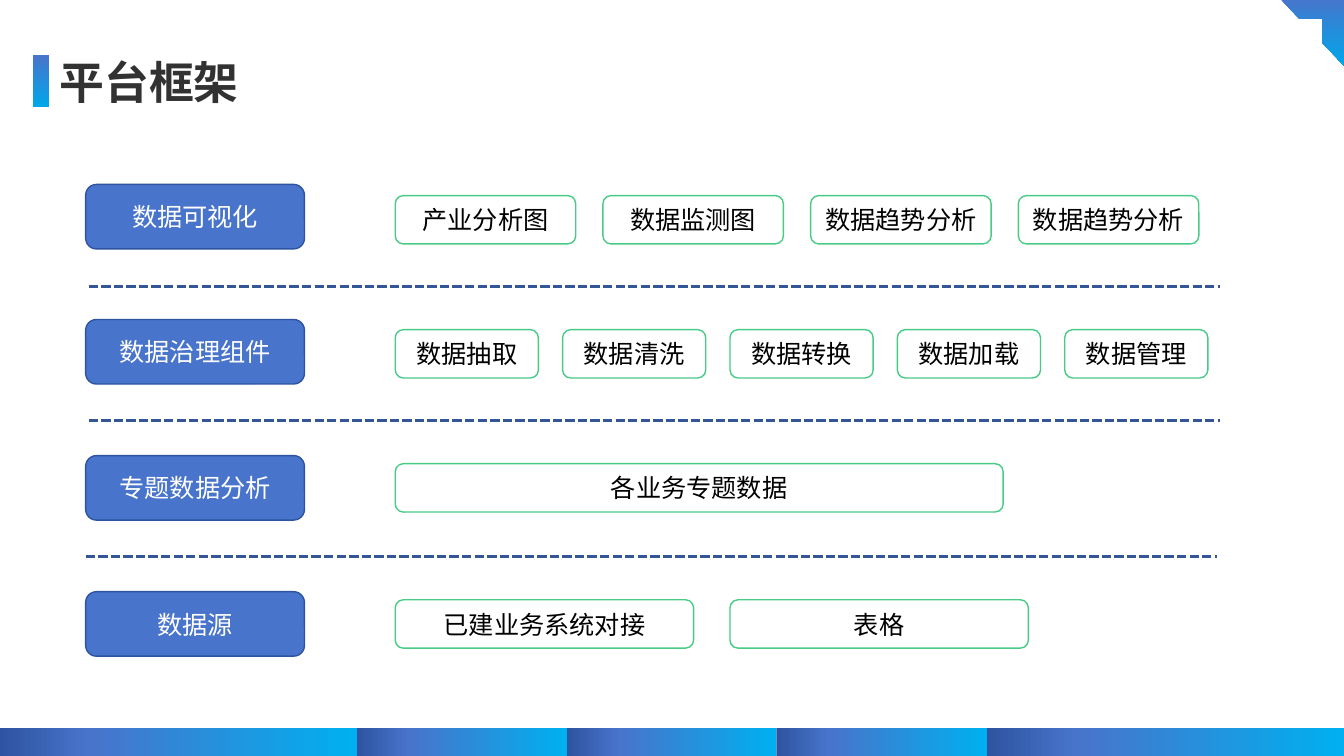
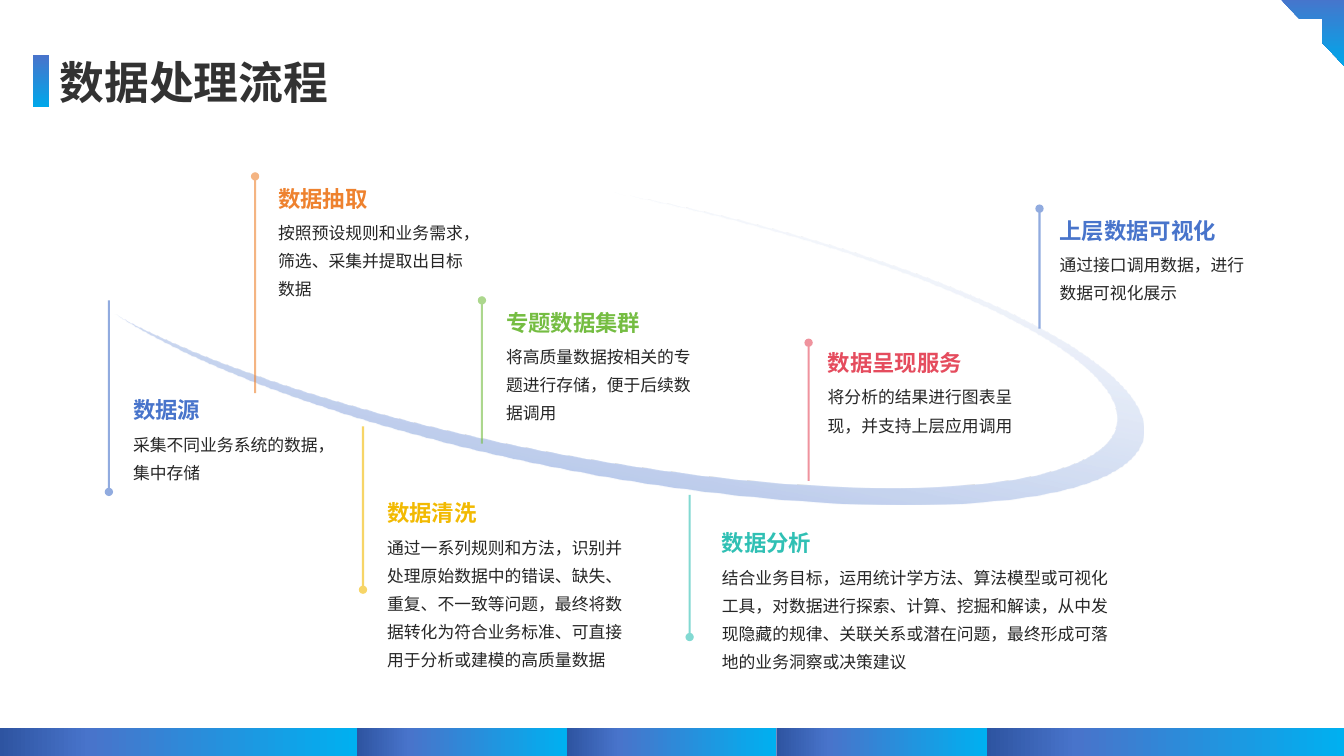
from dataclasses import dataclass
from math import ceil, cos, radians, sin

from lxml.etree import SubElement
from pptx import Presentation
from pptx.dml.color import RGBColor
from pptx.enum.dml import MSO_LINE
from pptx.enum.shapes import MSO_CONNECTOR, MSO_SHAPE
from pptx.enum.text import MSO_ANCHOR, PP_ALIGN
from pptx.oxml.ns import qn
from pptx.util import Inches, Pt


@dataclass(frozen=True)
class Theme:
    font: str = "Noto Sans CJK SC"
    label_font: str = "Arial"
    title_size: int = 32
    label_size: int = 18
    heading_size: int = 16
    body_size: int = 12
    title: str = "323232"
    body: str = "262626"
    black: str = "000000"
    white: str = "FFFFFF"
    blue: str = "4874CB"
    navy: str = "2E54A1"
    dash: str = "355696"
    sky: str = "00A7EA"
    cyan: str = "00B0F0"
    chip: str = "48CB87"
    orange: str = "EE822F"
    yellow: str = "F2BA02"
    green: str = "75BD42"
    teal: str = "30C0B4"
    red: str = "E54C5E"
    opacity: int = 60


T = Theme()
ACCENT = [(0, T.blue, 100), (100, T.sky, 100)]
BAND = [(0, T.navy, 100), (25, T.blue, 100), (100, T.cyan, 100)]
SWEEP_FILL = [(0, T.white, 0), (91, T.blue, T.opacity)]


def rgb(colour):
    return RGBColor.from_string(colour)


def write(tf, text, size=T.body_size, colour=T.body, bold=False, font=T.font,
          align=PP_ALIGN.LEFT, anchor=MSO_ANCHOR.TOP, spacing=None, inset=0):
    """Put one formatted paragraph into a text frame."""
    tf.word_wrap = True
    tf.vertical_anchor = anchor
    tf.margin_left = tf.margin_right = Inches(inset)
    tf.margin_top = tf.margin_bottom = Inches(inset / 2)
    p = tf.paragraphs[0]
    p.alignment = align
    if spacing:
        p.line_spacing = spacing
    r = p.add_run()
    r.text = text
    r.font.name, r.font.size, r.font.bold = font, Pt(size), bold
    r.font.color.rgb = rgb(colour)
    SubElement(r.font._element, qn("a:ea")).set("typeface", T.font)


def set_gradient(sp, stops, angle):
    """Fill with (position, colour, opacity) stops; angle runs clockwise."""
    sp.fill.background()
    spPr = sp._element.spPr
    no_fill = spPr.find(qn("a:noFill"))
    grad = SubElement(spPr, qn("a:gradFill"))
    grad.set("rotWithShape", "1")
    gs_lst = SubElement(grad, qn("a:gsLst"))
    for pos, colour, opacity in stops:
        gs = SubElement(gs_lst, qn("a:gs"))
        gs.set("pos", str(pos * 1000))
        clr = SubElement(gs, qn("a:srgbClr"))
        clr.set("val", colour)
        if opacity < 100:
            SubElement(clr, qn("a:alpha")).set("val", str(opacity * 1000))
    SubElement(grad, qn("a:lin")).set("ang", str(angle * 60000))
    spPr.replace(no_fill, grad)


def bend(sp, segments):
    """Turn each run of three line points into one Bezier curve."""
    lines = iter(sp._element.spPr.findall(".//" + qn("a:lnTo")))
    for segment in segments:
        first, *rest = [next(lines) for _ in segment]
        if rest:
            first.tag = qn("a:cubicBezTo")
            for ln in rest:
                first.append(ln[0])
                ln.getparent().remove(ln)


class Deck:
    def __init__(self):
        self.prs = Presentation()
        self.prs.slide_width, self.prs.slide_height = Inches(13.33), Inches(7.5)
        self.s = None

    def new_slide(self, title):
        """Start a slide with title, accents and bottom band."""
        self.s = self.prs.slides.add_slide(self.prs.slide_layouts[5])
        sp = self.s.shapes.title
        sp.left, sp.top, sp.width, sp.height = map(Inches, (0.49, 0.49, 3, 0.64))
        write(sp.text_frame, title, size=T.title_size, colour=T.title,
              bold=True, inset=0.1)
        self.shape(MSO_SHAPE.RECTANGLE, 0.33, 0.55, 0.16, 0.51, stops=ACCENT, angle=90)
        corner = self.shape(MSO_SHAPE.HALF_FRAME, 12.68, -0.03, 0.65, 0.68,
                            stops=ACCENT, angle=90)
        corner._element.spPr.find(qn("a:xfrm")).set("flipH", "1")
        edges = [0, 3.54, 5.62, 7.7, 9.79, 13.33]
        for left, right in zip(edges, edges[1:]):
            self.shape(MSO_SHAPE.RECTANGLE, left, 7.22, right - left, 0.35, stops=BAND)

    def shape(self, kind, x, y, w, h, fill=None, line=None, stops=None, angle=0):
        sp = self.s.shapes.add_shape(kind, *map(Inches, (x, y, w, h)))
        self.style(sp, fill, line, stops, angle)
        return sp

    def style(self, sp, fill=None, line=None, stops=None, angle=0):
        sp.shadow.inherit = False
        if stops:
            set_gradient(sp, stops, angle)
        elif fill:
            sp.fill.solid()
            sp.fill.fore_color.rgb = rgb(fill)
        else:
            sp.fill.background()
        if line:
            sp.line.color.rgb = rgb(line)
            sp.line.width = Pt(1)
        else:
            sp.line.fill.background()

    def box(self, text, x, y, w, h, colour, fill=None, line=None):
        """Rounded box with a centred label."""
        sp = self.shape(MSO_SHAPE.ROUNDED_RECTANGLE, x, y, w, h, fill, line)
        write(sp.text_frame, text, size=T.label_size, colour=colour,
              font=T.label_font, align=PP_ALIGN.CENTER, anchor=MSO_ANCHOR.MIDDLE)

    def text(self, text, x, y, w, h, **fmt):
        sp = self.s.shapes.add_textbox(*map(Inches, (x, y, w, h)))
        write(sp.text_frame, text, **fmt)

    def line(self, x1, y1, x2, y2, colour, width):
        cx = self.s.shapes.add_connector(
            MSO_CONNECTOR.STRAIGHT, *map(Inches, (x1, y1, x2, y2)))
        cx.line.color.rgb = rgb(colour)
        cx.line.width = Pt(width)
        SubElement(cx._element.spPr, qn("a:effectLst"))
        return cx

    def divider(self, x1, x2, y):
        self.line(x1, y, x2, y, T.dash, 2.25).line.dash_style = MSO_LINE.SQUARE_DOT

    def stem(self, x, dot_y, end_y, colour):
        """Pale vertical line that starts with a dot."""
        ln = self.line(x, dot_y, x, end_y, colour, 1.5).line._ln
        alpha = SubElement(ln.find(".//" + qn("a:srgbClr")), qn("a:alpha"))
        alpha.set("val", str(T.opacity * 1000))
        SubElement(ln, qn("a:headEnd")).set("type", "oval")

    def callout(self, heading, body, colour, x, y, w, stem_x, dot_y, end_y):
        self.stem(stem_x, dot_y, end_y, colour)
        self.text(heading, x, y, 1.87, 0.35, size=T.heading_size, colour=colour,
                  bold=True, anchor=MSO_ANCHOR.BOTTOM)
        lines = ceil(len(body) * T.body_size / 72 / w)
        self.text(body, x, y + 0.38, w, lines * 0.28, spacing=1.4)

    def outline(self, start, segments, rotation, stops, angle):
        """Curved outline in page points, with a gradient that turns with it."""
        points = [start] + [pt for segment in segments for pt in segment]
        a = radians(rotation)
        mx, my = (sum((min(v), max(v))) / 2 for v in zip(*points))
        flat = [(mx + (x - mx) * cos(a) + (y - my) * sin(a),
                 my - (x - mx) * sin(a) + (y - my) * cos(a)) for x, y in points]
        emu = [(Inches(x), Inches(y)) for x, y in flat]
        fb = self.s.shapes.build_freeform(*emu[0])
        fb.add_line_segments(emu[1:], close=True)
        sp = fb.convert_to_shape()
        bend(sp, segments)
        self.style(sp, stops=stops, angle=angle)
        # Rotation turns about the box centre, so move that centre to the page
        bx, by = (sum((min(v), max(v))) / 2 - m for v, m in zip(zip(*flat), (mx, my)))
        sp.left += Inches(bx * cos(a) - by * sin(a) - bx)
        sp.top += Inches(bx * sin(a) + by * cos(a) - by)
        sp.rotation = rotation


# Platform layers: label, label y, chip y, chip width, chip step, chips
LAYERS = [
    ("数据可视化", 1.83, 1.94, 1.79, 2.06,
     ["产业分析图", "数据监测图", "数据趋势分析", "数据趋势分析"]),
    ("数据治理组件", 3.17, 3.27, 1.42, 1.66,
     ["数据抽取", "数据清洗", "数据转换", "数据加载", "数据管理"]),
    ("专题数据分析", 4.52, 4.6, 6.03, 0, ["各业务专题数据"]),
    ("数据源", 5.87, 5.95, 2.96, 3.32, ["已建业务系统对接", "表格"]),
]
DIVIDERS = [(0.88, 12.1, 2.84), (0.88, 12.1, 4.17), (0.85, 12.07, 5.52)]

# Tapering sweep: inner edge out, outer edge back
SWEEP_START = (6.17, 1.93)
SWEEP = [
    [(6.04, 1.9)],
    [(6.45, 1.99)],
    [(9.17, 2.58), (11.2, 3.54), (11.07, 4.21)],
    [(10.93, 4.93), (8.39, 5.04), (5.4, 4.47)],
    [(3.71, 4.15), (2.24, 3.68), (1.3, 3.2)],
    [(1.14, 3.11)],
    [(1.27, 3.19)],
    [(2.18, 3.74), (3.78, 4.3), (5.65, 4.66)],
    [(8.65, 5.23), (11.19, 5.08), (11.34, 4.33)],
    [(11.48, 3.58), (9.17, 2.5), (6.17, 1.93)],
]

# Steps: heading, body, colour, text x, heading y, width, stem x, dot y, end y
STEPS = [
    ("数据分析", "结合业务目标，运用统计学方法、算法模型或可视化工具，对数据进行探索、计算、"
     "挖掘和解读，从中发现隐藏的规律、关联关系或潜在问题，最终形成可落地的业务洞察或决策建议",
     T.teal, 7.16, 5.17, 3.91, 6.84, 6.32, 4.91),
    ("数据呈现服务", "将分析的结果进行图表呈现，并支持上层应用调用",
     T.red, 8.21, 3.38, 1.87, 8.02, 3.4, 4.77),
    ("上层数据可视化", "通过接口调用数据，进行数据可视化展示",
     T.blue, 10.51, 2.07, 1.87, 10.31, 2.07, 3.26),
    ("专题数据集群", "将高质量数据按相关的专题进行存储，便于后续数据调用",
     T.green, 5.02, 2.98, 1.87, 4.78, 2.98, 4.4),
    ("数据抽取", "按照预设规则和业务需求，筛选、采集并提取出目标数据",
     T.orange, 2.76, 1.75, 1.87, 2.53, 1.75, 3.9),
    ("数据源", "采集不同业务系统的数据，集中存储",
     T.blue, 1.32, 3.85, 1.87, 1.08, 4.88, 2.98),
    ("数据清洗", "通过一系列规则和方法，识别并处理原始数据中的错误、缺失、重复、不一致等问题，"
     "最终将数据转化为符合业务标准、可直接用于分析或建模的高质量数据",
     T.yellow, 3.84, 4.87, 2.4, 3.6, 5.85, 4.23),
]


def platform_slide(deck):
    deck.new_slide("平台框架")
    for label, y, chip_y, width, step, chips in LAYERS:
        deck.box(label, 0.85, y, 2.17, 0.64, T.white, fill=T.blue, line=T.navy)
        for col, chip in enumerate(chips):
            deck.box(chip, 3.92 + col * step, chip_y, width, 0.48, T.black, line=T.chip)
    for divider in DIVIDERS:
        deck.divider(*divider)


def process_slide(deck):
    deck.new_slide("数据处理流程")
    deck.outline(SWEEP_START, SWEEP, 10.8, SWEEP_FILL, 90)
    for step in STEPS:
        deck.callout(*step)


def main():
    deck = Deck()
    platform_slide(deck)
    process_slide(deck)
    deck.prs.save("out.pptx")


if __name__ == "__main__":
    main()
